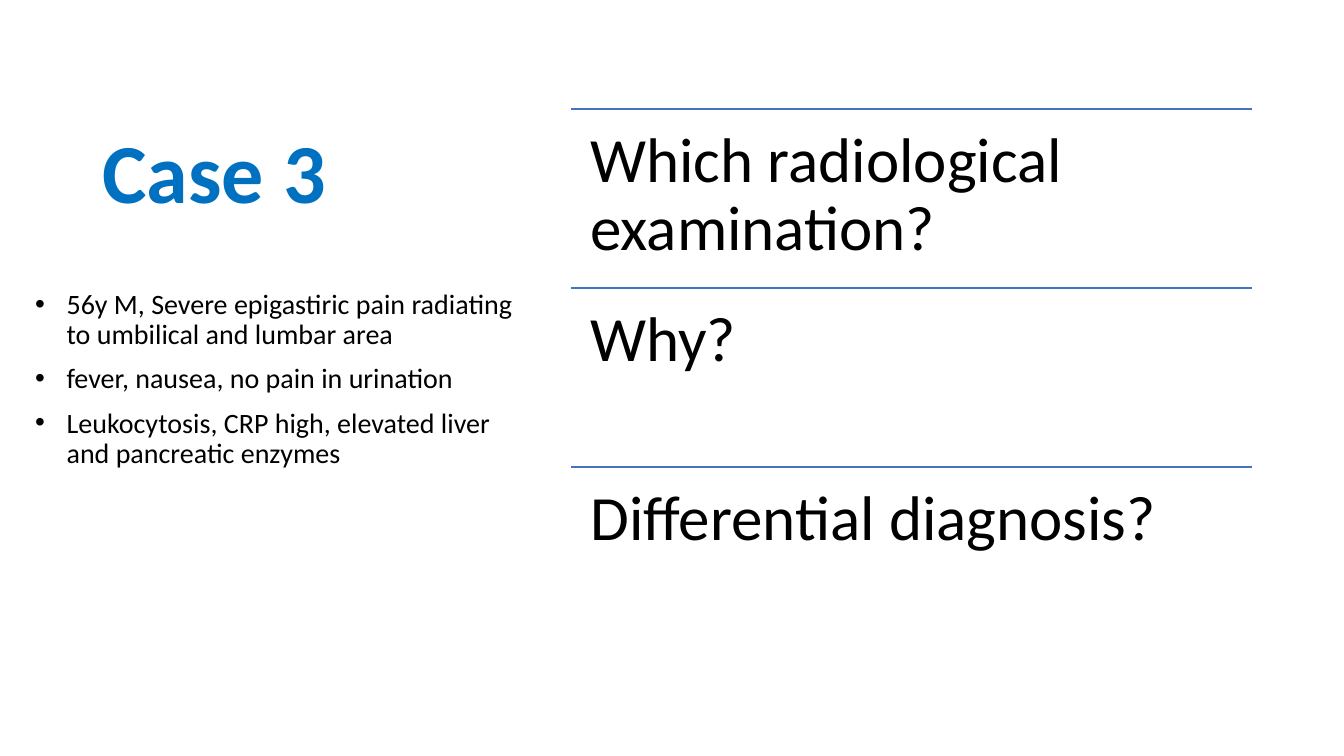
from dataclasses import dataclass

from lxml.etree import SubElement
from pptx import Presentation
from pptx.dml.color import RGBColor
from pptx.enum.shapes import MSO_CONNECTOR
from pptx.enum.text import MSO_ANCHOR, MSO_AUTO_SIZE, PP_ALIGN
from pptx.oxml.ns import qn
from pptx.slide import Slide
from pptx.text.text import TextFrame, _Paragraph
from pptx.util import Pt


@dataclass(frozen=True)
class Theme:
    font: str = "Calibri"
    title_color: RGBColor = RGBColor(0x00, 0x70, 0xC0)
    text_color: RGBColor = RGBColor(0x00, 0x00, 0x00)
    rule_color: RGBColor = RGBColor(0x44, 0x72, 0xC4)
    title_size: float = 60
    question_size: float = 45
    finding_size: float = 20
    rule_width: float = 1
    line_spacing: float = 0.9


@dataclass(frozen=True)
class Box:
    left: float
    top: float
    width: float
    height: float

    def lengths(self) -> tuple[Pt, Pt, Pt, Pt]:
        return Pt(self.left), Pt(self.top), Pt(self.width), Pt(self.height)


@dataclass(frozen=True)
class Question:
    text: str
    box: Box


THEME = Theme()
TITLE_BOX = Box(66, 36, 309.6, 126)
FINDINGS_BOX = Box(18, 203.76, 357.84, 300.24)
QUESTION_TOP, QUESTION_HEIGHT = 77.9, 127.8
QUESTION_INSET = 13.5
BULLET_INDENT = 22.5

QUESTIONS = [
    Question(text, Box(408.24, QUESTION_TOP + i * QUESTION_HEIGHT, 486, QUESTION_HEIGHT))
    for i, text in enumerate(
        ["Which radiological examination?", "Why?", "Differential diagnosis?"])
]
FINDINGS = [
    "56y M, Severe epigastiric pain radiating to umbilical and lumbar area",
    "fever, nausea, no pain in urination",
    "Leukocytosis, CRP high, elevated liver and pancreatic enzymes",
]


def format_frame(tf: TextFrame, anchor: MSO_ANCHOR, inset: float | None = None) -> None:
    formats = {"word_wrap": True, "auto_size": MSO_AUTO_SIZE.NONE, "vertical_anchor": anchor}
    if inset is not None:
        sides = ("left", "top", "right", "bottom")
        formats |= {f"margin_{side}": Pt(inset) for side in sides}
    for name, value in formats.items():
        setattr(tf, name, value)


def write(p: _Paragraph, text: str, size: float, color: RGBColor, bold: bool = False) -> None:
    p.alignment = PP_ALIGN.LEFT
    p.line_spacing = THEME.line_spacing
    r = p.add_run()
    r.text = text
    for name, value in {"name": THEME.font, "size": Pt(size), "bold": bold}.items():
        setattr(r.font, name, value)
    r.font.color.rgb = color


def add_title(s: Slide, text: str) -> None:
    sp = s.shapes.title
    sp.left, sp.top, sp.width, sp.height = TITLE_BOX.lengths()
    format_frame(sp.text_frame, MSO_ANCHOR.BOTTOM)
    write(sp.text_frame.paragraphs[0], text, THEME.title_size, THEME.title_color, bold=True)


def add_question(s: Slide, question: Question) -> None:
    left, top, width, height = question.box.lengths()
    rule = s.shapes.add_connector(MSO_CONNECTOR.STRAIGHT, left, top, left + width, top)
    rule.line.color.rgb = THEME.rule_color
    rule.line.width = Pt(THEME.rule_width)
    SubElement(rule._element.spPr, qn("a:effectLst"))
    tf = s.shapes.add_textbox(left, top, width, height).text_frame
    format_frame(tf, MSO_ANCHOR.TOP, QUESTION_INSET)
    write(tf.paragraphs[0], question.text, THEME.question_size, THEME.text_color)


def add_findings(s: Slide, findings: list[str]) -> None:
    tf = s.shapes.add_textbox(*FINDINGS_BOX.lengths()).text_frame
    format_frame(tf, MSO_ANCHOR.TOP)
    for i, text in enumerate(findings):
        p = tf.add_paragraph() if i else tf.paragraphs[0]
        pPr = p._p.get_or_add_pPr()
        pPr.set("marL", str(Pt(BULLET_INDENT)))
        pPr.set("indent", str(-Pt(BULLET_INDENT)))
        SubElement(pPr, qn("a:buFont"), typeface="Arial")
        SubElement(pPr, qn("a:buChar"), char="•")
        if i:
            p.space_before = Pt(10)
        write(p, text, THEME.finding_size, THEME.text_color)


def main() -> None:
    prs = Presentation()
    prs.slide_width, prs.slide_height = Pt(960), Pt(540)
    s = prs.slides.add_slide(prs.slide_layouts[5])

    # Case heading
    add_title(s, "Case 3")
    # Ruled list of questions
    for question in QUESTIONS:
        add_question(s, question)
    # Clinical findings
    add_findings(s, FINDINGS)

    prs.save("out.pptx")


if __name__ == "__main__":
    main()
